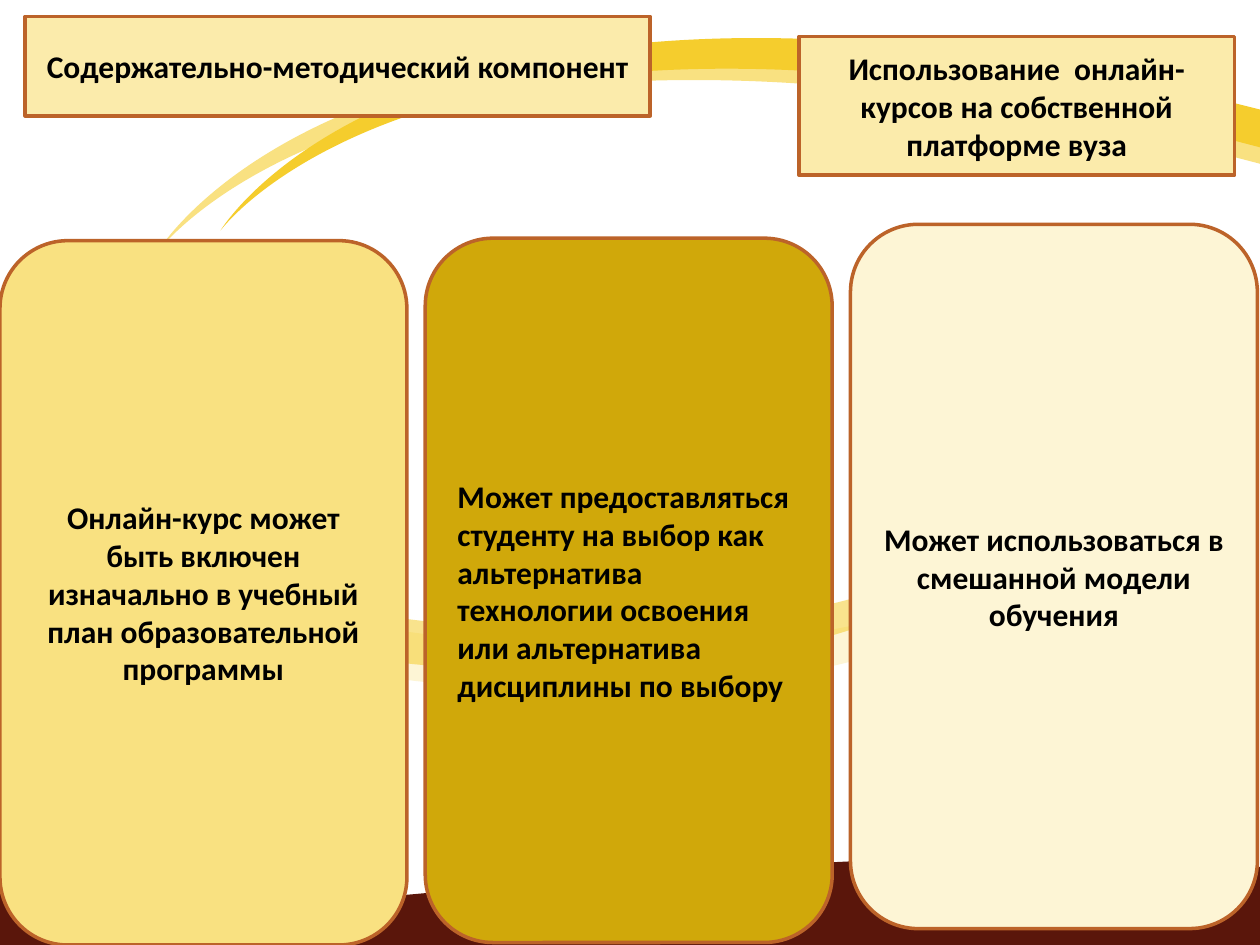
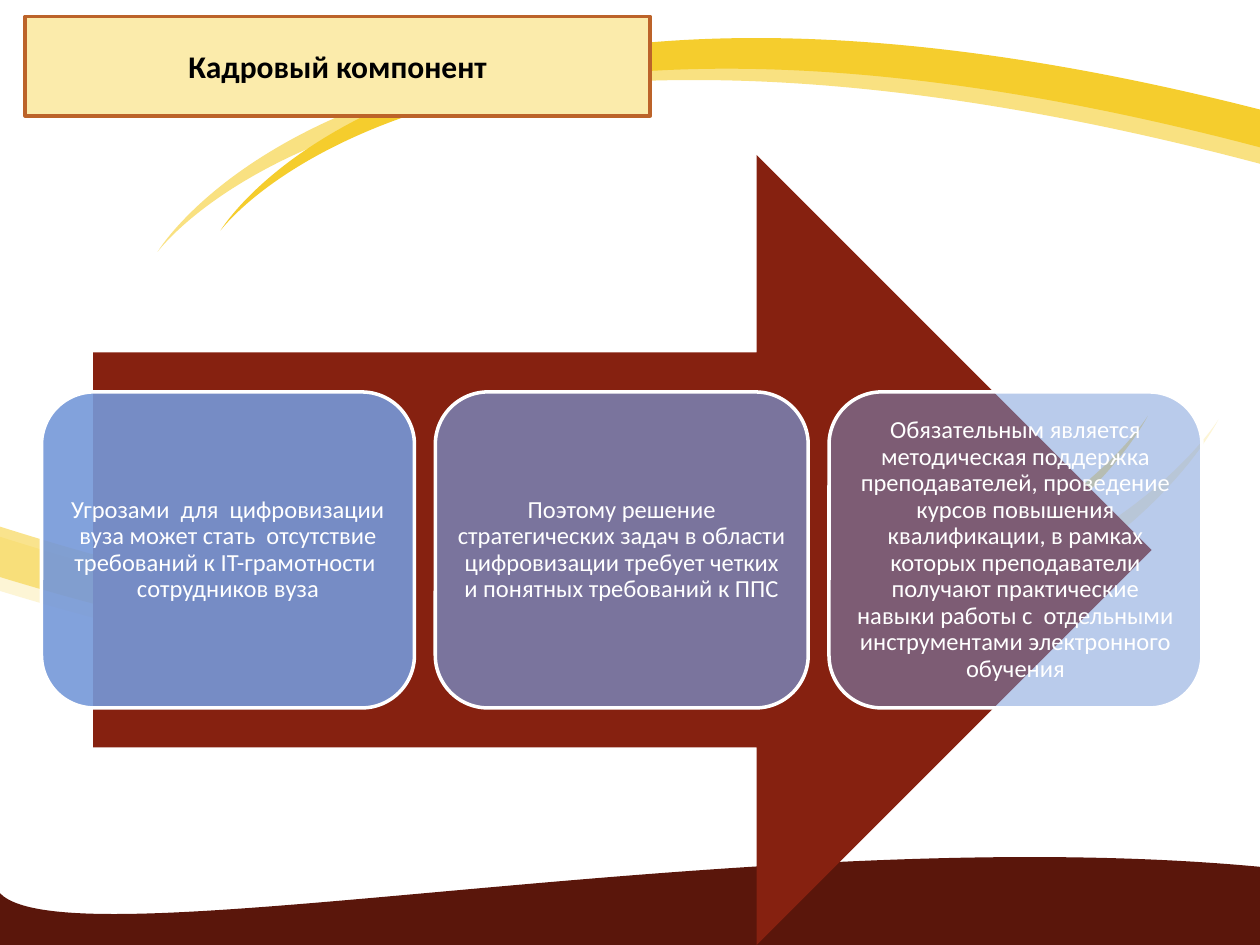
import pptx
import pptx.dml.color
import pptx.enum.shapes
import pptx.enum.text
import pptx.oxml
import pptx.oxml.ns
import pptx.util

Inches = pptx.util.Inches
Shapes = pptx.enum.shapes.MSO_SHAPE
Align = pptx.enum.text.PP_ALIGN

COLOURS = {
    "maroon": "5A160B",
    "arrow": "862110",
    "cream": "FDF5D5",
    "pale": "F9E181",
    "yellow": "F5CD2D",
    "gold": "D0A80A",
    "label": "FBEBAB",
    "border": "BC6329",
    "blue": "7598D9",
    "white": "FFFFFF",
    "black": "000000",
}
BOLD_TEXT = {"name": "Calibri", "size": pptx.util.Pt(18), "bold": True}
CARD_TEXT = {"name": "Calibri", "size": pptx.util.Pt(14), "bold": False}
TITLE_BOX = (0.2, 0.13, 4.96, 0.79)

WAVES = [
    ("maroon", 100, (0, 7.09),
     [((0.56, 7.67), (5.96, 6.5), (10, 6.88)),
      ((10, 7.09), (10.01, 7.32), (10.01, 7.54))], [(0, 7.51)]),
    ("cream", 100, (0, 4.26),
     [((7.63, 6.68), (9.67, 3.33), (9.67, 3.33)),
      ((9.67, 3.33), (7.82, 7.08), (0, 4.69))], []),
    ("pale", 100, (10, 1.3),
     [((3.09, -0.53), (1.25, 2), (1.25, 2)),
      ((1.25, 2), (2.92, -0.83), (10, 0.97))], []),
    ("yellow", 100, (10, 1.17),
     [((3.49, -0.55), (1.75, 1.83), (1.75, 1.83)),
      ((1.75, 1.83), (3.33, -0.83), (10, 0.87))], []),
    ("yellow", 54, (0, 4.18),
     [((7.2, 6.46), (9.11, 3.3), (9.11, 3.3)),
      ((9.11, 3.3), (7.37, 6.83), (0, 4.58))], []),
]

COURSE_CARDS = [
    (1.91, "pale", Align.CENTER,
     "Онлайн-курс может быть включен изначально в учебный план "
     "образовательной программы"),
    (1.89, "gold", Align.LEFT,
     "Может предоставляться студенту на выбор как альтернатива технологии "
     "освоения или альтернатива дисциплины по выбору"),
    (1.78, "cream", Align.CENTER,
     "Может использоваться в смешанной модели обучения"),
]

STAFF_CARDS = [
    (90, "Угрозами  для  цифровизации вуза может стать  отсутствие "
         "требований к IT-грамотности  сотрудников вуза"),
    (70, "Поэтому решение стратегических задач в области цифровизации "
         "требует четких и понятных требований к ППС"),
    (50, "Обязательным является методическая поддержка преподавателей, "
         "проведение курсов повышения квалификации, в рамках которых "
         "преподаватели получают практические навыки работы с  отдельными "
         "инструментами электронного обучения"),
]


def rgb(colour):
    return pptx.dml.color.RGBColor.from_string(COLOURS[colour])


def paint(shape, fill, opacity=100, line=None):
    shape.fill.solid()
    shape.fill.fore_color.rgb = rgb(fill)
    if opacity < 100:
        colour = shape._element.spPr.find(".//" + pptx.oxml.ns.qn("a:srgbClr"))
        colour.append(pptx.oxml.parse_xml(
            f'<a:alpha {pptx.oxml.ns.nsdecls("a")} val="{opacity * 1000}"/>'))
    if line:
        shape.line.color.rgb = rgb(line)
        shape.line.width = pptx.util.Pt(2)
    else:
        shape.line.fill.background()


def write(shape, text, text_format, colour, alignment=Align.CENTER,
          side=0.1, edge=0.05, spacing=1.0):
    frame = shape.text_frame
    frame_format = {
        "word_wrap": True,
        "auto_size": pptx.enum.text.MSO_AUTO_SIZE.NONE,
        "vertical_anchor": pptx.enum.text.MSO_ANCHOR.MIDDLE,
        "margin_left": Inches(side),
        "margin_right": Inches(side),
        "margin_top": Inches(edge),
        "margin_bottom": Inches(edge),
    }
    for name, value in frame_format.items():
        setattr(frame, name, value)
    frame.text = text
    paragraph = frame.paragraphs[0]
    paragraph.alignment = alignment
    paragraph.line_spacing = spacing
    font = paragraph.runs[0].font
    for name, value in text_format.items():
        setattr(font, name, value)
    font.color.rgb = rgb(colour)


def add_box(slide, preset, box, fill, opacity=100, line=None):
    shape = slide.shapes.add_shape(preset, *map(Inches, box))
    shape.shadow.inherit = False
    paint(shape, fill, opacity, line)
    return shape


def bend_segments(shape, curve_count):
    segments = list(shape._element.iter(pptx.oxml.ns.qn("a:lnTo")))
    for index in range(curve_count):
        first, second, end = segments[3 * index:3 * index + 3]
        curve = pptx.oxml.parse_xml(
            f'<a:cubicBezTo {pptx.oxml.ns.nsdecls("a")}/>')
        first.addprevious(curve)
        for segment in (first, second, end):
            curve.append(segment[0])
            segment.getparent().remove(segment)


def add_waves(slide):
    layout_tree = slide.slide_layout.shapes._spTree
    for position, (fill, opacity, start, curves, corners) in enumerate(WAVES):
        points = [point for curve in curves for point in curve] + corners
        outline = [(Inches(x), Inches(y)) for x, y in points]
        builder = slide.shapes.build_freeform(*map(Inches, start))
        builder.add_line_segments(outline, close=True)
        wave = builder.convert_to_shape()
        bend_segments(wave, len(curves))
        wave.shadow.inherit = False
        paint(wave, fill, opacity)
        layout_tree.insert(2 + position, wave._element)


def add_title(slide, text, box):
    title = slide.shapes.title
    title.left, title.top, title.width, title.height = map(Inches, box)
    paint(title, "label", line="border")
    write(title, text, BOLD_TEXT, "black")


def add_course_cards(slide, box):
    left, width, height, step = box
    for index, (top, fill, alignment, text) in enumerate(COURSE_CARDS):
        card = add_box(slide, Shapes.ROUNDED_RECTANGLE,
                       (left + index * step, top, width, height),
                       fill, line="border")
        write(card, text, BOLD_TEXT, "black", alignment)


def add_topic(slide, text, box):
    topic = add_box(slide, Shapes.RECTANGLE, box, "label", line="border")
    write(topic, text, BOLD_TEXT, "black")


def add_staff_process(slide, box):
    left, top, width, height = box
    add_box(slide, Shapes.RIGHT_ARROW,
            (left + 0.41, top, width - 0.81, height), "arrow")
    card_width, card_height = 2.96, height * 0.4
    step = (width - card_width) / (len(STAFF_CARDS) - 1)
    for index, (opacity, text) in enumerate(STAFF_CARDS):
        card = add_box(slide, Shapes.ROUNDED_RECTANGLE,
                       (left + index * step, top + height * 0.3,
                        card_width, card_height),
                       "blue", opacity, "white")
        write(card, text, CARD_TEXT, "white", side=0.05, edge=0.06,
              spacing=0.9)


def build_content_slide(slide):
    add_title(slide, "Содержательно-методический компонент", TITLE_BOX)
    add_course_cards(slide, (0, 3.23, 5.59, 3.375))
    add_topic(slide,
              "Использование  онлайн-курсов на собственной платформе вуза",
              (6.34, 0.29, 3.46, 1.1))


def build_staff_slide(slide):
    add_title(slide, "Кадровый компонент", TITLE_BOX)
    add_staff_process(slide, (0.33, 1.23, 9.21, 6.27))


def main():
    presentation = pptx.Presentation()
    presentation.slide_width = Inches(10)
    presentation.slide_height = Inches(7.5)
    layout = presentation.slide_layouts[5]
    content_slide = presentation.slides.add_slide(layout)
    add_waves(content_slide)
    build_content_slide(content_slide)
    build_staff_slide(presentation.slides.add_slide(layout))
    presentation.save("out.pptx")


if __name__ == "__main__":
    main()
